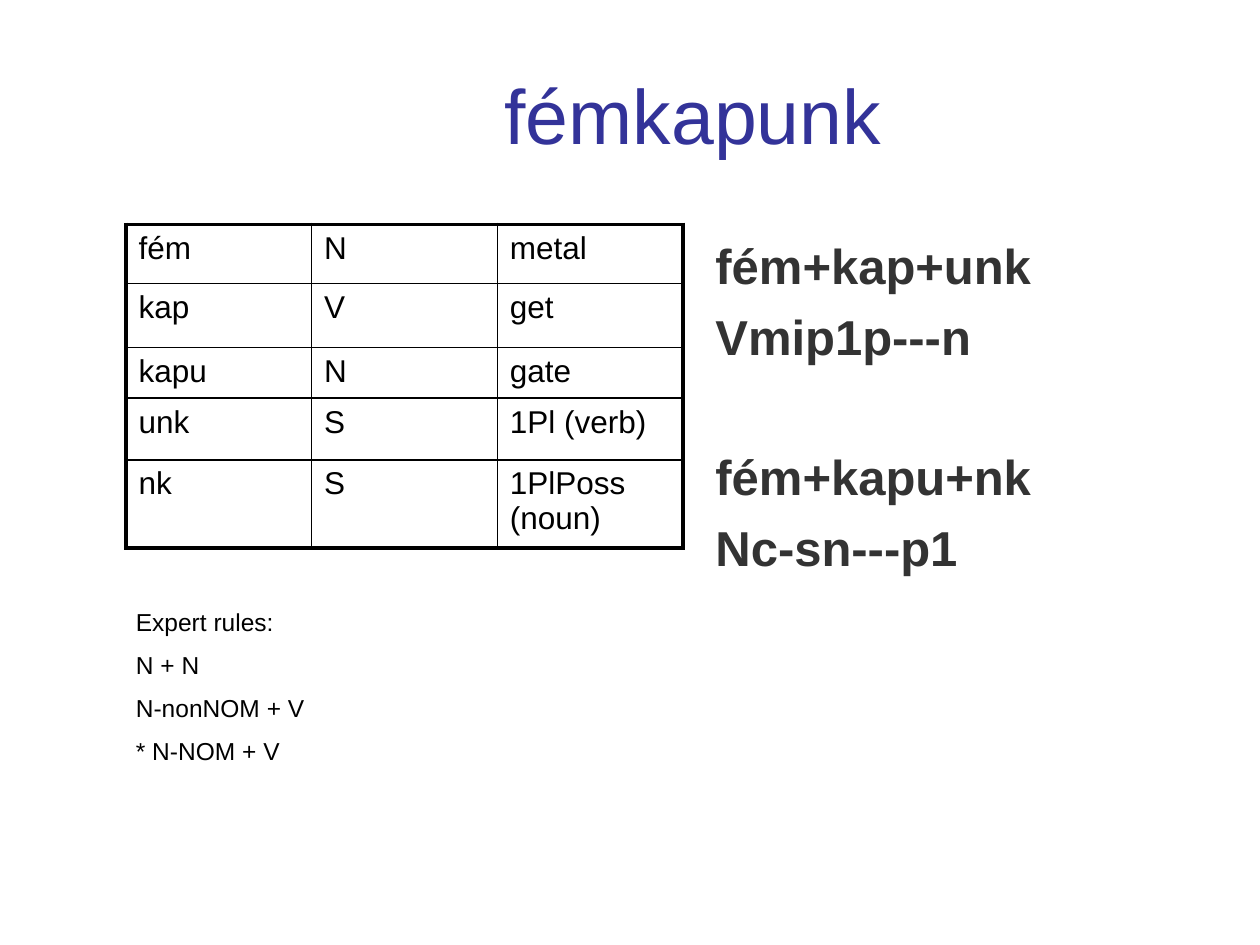
from dataclasses import dataclass

from lxml import etree
from pptx import Presentation
from pptx.dml.color import RGBColor
from pptx.enum.text import MSO_ANCHOR, PP_ALIGN
from pptx.oxml.ns import qn
from pptx.util import Inches, Pt

CENTER = PP_ALIGN.CENTER
LEFT = PP_ALIGN.LEFT
MIDDLE = MSO_ANCHOR.MIDDLE
TOP = MSO_ANCHOR.TOP
TITLE_ONLY = 5


@dataclass(frozen=True)
class Theme:
    font: str = "Arial"
    title_color: str = "333399"
    analysis_color: str = "333333"
    ink: str = "000000"
    title_size: int = 44
    analysis_size: int = 28
    table_size: int = 18
    rules_size: int = 14
    outer_line: float = 2.25
    inner_line: float = 1


THEME = Theme()

# Positions in inches: both columns share a top edge and a width
MARGIN = 1
COLUMN_TOP = 1.78
COLUMN_WIDTH = 4.42
ROW_HEIGHTS = [0.47, 0.51, 0.38, 0.49, 0.66]

MORPHEMES = [
    ("fém", "N", "metal"),
    ("kap", "V", "get"),
    ("kapu", "N", "gate"),
    ("unk", "S", "1Pl (verb)"),
    ("nk", "S", "1PlPoss (noun)"),
]
# Each line with its space before, in points; the wide gap parts the analyses
ANALYSES = [
    ("fém+kap+unk", 0),
    ("Vmip1p---n", 7),
    ("fém+kapu+nk", 46),
    ("Nc-sn---p1", 7),
]
RULES = [
    ("Expert rules:", 0),
    ("N + N", 7.7),
    ("N-nonNOM + V", 7.7),
    ("* N-NOM + V", 7.7),
]


def apply_format(target, values):
    for name, value in values.items():
        setattr(target, name, value)


def write_lines(frame, lines, size, color, bold=False, alignment=LEFT):
    """Fill a text frame with (text, space before) lines in one style."""
    for index, (text, space_before) in enumerate(lines):
        paragraph = frame.paragraphs[0] if index == 0 else frame.add_paragraph()
        paragraph.text = text
        paragraph.alignment = alignment
        if space_before:
            paragraph.space_before = Pt(space_before)
        apply_format(paragraph.font, {"name": THEME.font, "size": Pt(size), "bold": bold})
        paragraph.font.color.rgb = RGBColor.from_string(color)


def add_title(slide, text):
    title = slide.shapes.title
    apply_format(title, {"left": Inches(MARGIN), "top": Inches(0.28),
                         "width": Inches(9), "height": Inches(1.25)})
    title.text_frame.vertical_anchor = MIDDLE
    write_lines(title.text_frame, [(text, 0)], THEME.title_size,
                THEME.title_color, alignment=CENTER)


def add_text(slide, box, lines, size, color, bold=False, top_inset=0.05):
    shape = slide.shapes.add_textbox(*map(Inches, box))
    apply_format(shape.text_frame, {"word_wrap": True, "vertical_anchor": TOP,
                                    "margin_top": Inches(top_inset)})
    write_lines(shape.text_frame, lines, size, color, bold)


def set_borders(cell, outer_sides):
    """Draw a heavy line on the outer sides and a thin one elsewhere."""
    properties = cell._tc.get_or_add_tcPr()
    for side in "LRTB":
        width = THEME.outer_line if side in outer_sides else THEME.inner_line
        line = etree.SubElement(properties, qn(f"a:ln{side}"), w=str(Pt(width)))
        fill = etree.SubElement(line, qn("a:solidFill"))
        etree.SubElement(fill, qn("a:srgbClr"), val=THEME.ink)


def add_morpheme_table(slide):
    row_count, column_count = len(MORPHEMES), len(MORPHEMES[0])
    table = slide.shapes.add_table(
        row_count, column_count, Inches(MARGIN), Inches(COLUMN_TOP),
        Inches(COLUMN_WIDTH), Inches(sum(ROW_HEIGHTS))).table
    apply_format(table, {"first_row": False, "horz_banding": False})
    for row, height in zip(table.rows, ROW_HEIGHTS):
        row.height = Inches(height)

    for row_index, morpheme in enumerate(MORPHEMES):
        for column_index, text in enumerate(morpheme):
            cell = table.cell(row_index, column_index)
            write_lines(cell.text_frame, [(text, 0)], THEME.table_size, THEME.ink)
            edges = {"L": column_index == 0, "R": column_index == column_count - 1,
                     "T": row_index == 0, "B": row_index == row_count - 1}
            set_borders(cell, [side for side, outer in edges.items() if outer])
            cell.fill.background()


def main():
    presentation = Presentation()
    apply_format(presentation, {"slide_width": Inches(10), "slide_height": Inches(7.5)})
    slide = presentation.slides.add_slide(presentation.slide_layouts[TITLE_ONLY])

    add_title(slide, "fémkapunk")
    # Right column: the two competing analyses
    add_text(slide, (10 - COLUMN_WIDTH, COLUMN_TOP, COLUMN_WIDTH, 4.95), ANALYSES,
             THEME.analysis_size, THEME.analysis_color, bold=True, top_inset=0.09)
    # Left column: the morphemes and the rules that combine them
    add_morpheme_table(slide)
    add_text(slide, (0.98, 4.77, 4.49, 1.76), RULES, THEME.rules_size, THEME.ink)

    presentation.save("out.pptx")


if __name__ == "__main__":
    main()
